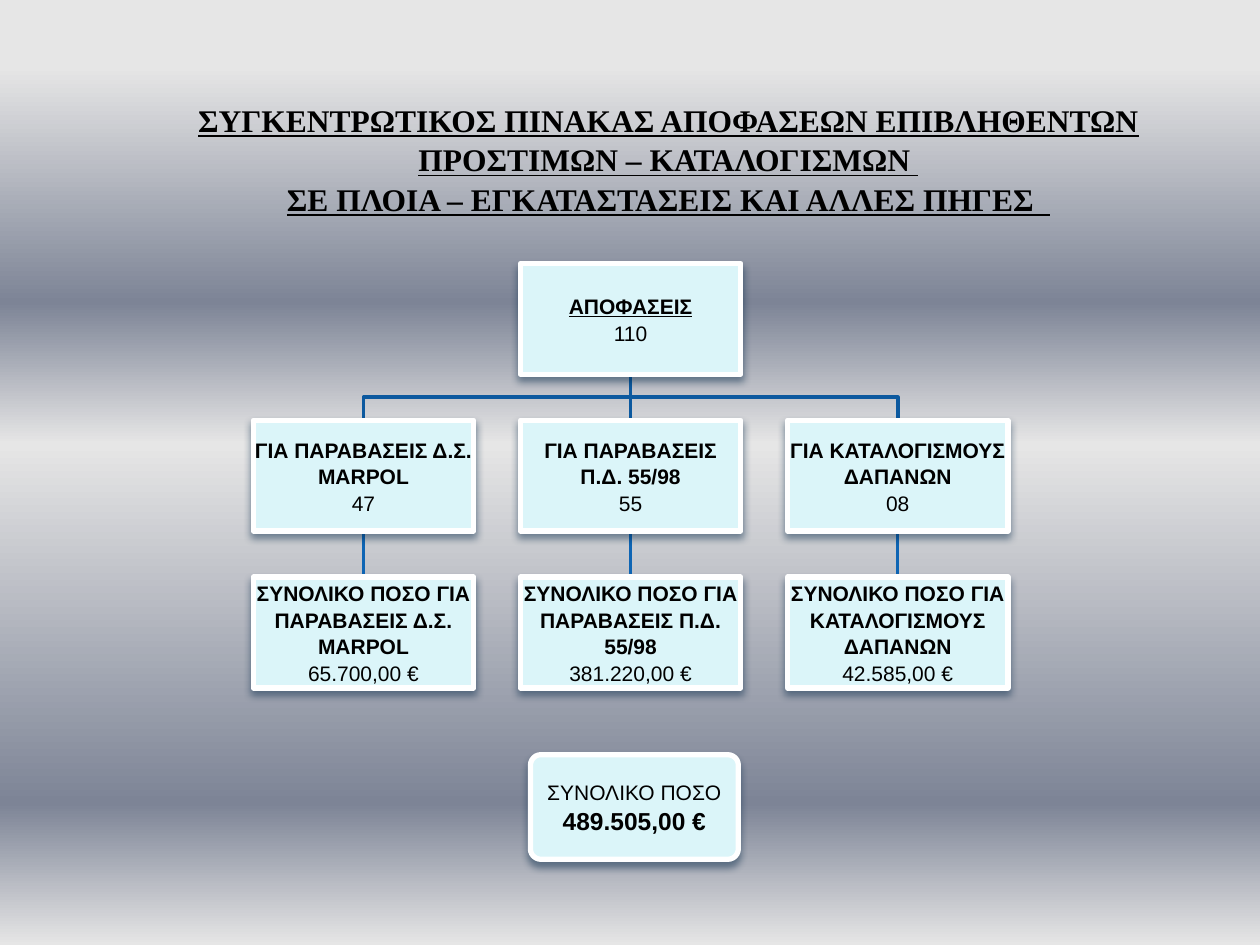
"""Build the summary slide of decisions and fines as an organisation chart."""
from dataclasses import dataclass

from lxml.etree import SubElement
from pptx import Presentation
from pptx.dml.color import RGBColor
from pptx.enum.shapes import MSO_CONNECTOR as Connector, MSO_SHAPE as Preset
from pptx.enum.text import MSO_ANCHOR as Anchor, MSO_AUTO_SIZE as AutoSize, PP_ALIGN as Align
from pptx.oxml.ns import qn
from pptx.shapes.autoshape import Shape
from pptx.slide import Slide
from pptx.text.text import TextFrame
from pptx.util import Inches, Pt


@dataclass(frozen=True)
class Theme:
    box_fill: str = "DBF5F9"
    box_line: str = "FFFFFF"
    shadow: str = "042747"
    text: str = "000000"
    upper_link: str = "0C599F"
    lower_link: str = "0E65B4"
    title_font: str = "Times New Roman"
    body_font: str = "Arial"
    title_size: int = 18
    body_size: int = 12
    total_size: int = 14
    line_spacing: float = 1.05
    background: tuple = ((7, "E6E6E6"), (32, "7D8496"), (47, "E6E6E6"),
                         (85, "7D8496"), (100, "E6E6E6"))


@dataclass(frozen=True)
class Grid:
    left: float = 2.01
    top: float = 2.09
    column_pitch: float = 2.12
    row_pitch: float = 2.49 / 2
    box_width: float = 1.75
    box_height: float = 0.88

    def box(self, column: int, row: int) -> tuple:
        return (self.left + column * self.column_pitch, self.top + row * self.row_pitch,
                self.box_width, self.box_height)


@dataclass(frozen=True)
class Branch:
    reason: str
    count: str
    total_label: str
    amount: str


THEME = Theme()
GRID = Grid()
TITLE = ("ΣΥΓΚΕΝΤΡΩΤΙΚΟΣ ΠΙΝΑΚΑΣ ΑΠΟΦΑΣΕΩΝ ΕΠΙΒΛΗΘΕΝΤΩΝ ΠΡΟΣΤΙΜΩΝ – ΚΑΤΑΛΟΓΙΣΜΩΝ \v"
         "ΣΕ ΠΛΟΙΑ – ΕΓΚΑΤΑΣΤΑΣΕΙΣ ΚΑΙ ΑΛΛΕΣ ΠΗΓΕΣ  ")
BRANCHES = (
    Branch("ΓΙΑ ΠΑΡΑΒΑΣΕΙΣ Δ.Σ. MARPOL", "47",
           "ΣΥΝΟΛΙΚΟ ΠΟΣΟ ΓΙΑ ΠΑΡΑΒΑΣΕΙΣ Δ.Σ. MARPOL", "65.700,00 €"),
    Branch("ΓΙΑ ΠΑΡΑΒΑΣΕΙΣ Π.Δ. 55/98", "55",
           "ΣΥΝΟΛΙΚΟ ΠΟΣΟ ΓΙΑ ΠΑΡΑΒΑΣΕΙΣ Π.Δ. 55/98", "381.220,00 €"),
    Branch("ΓΙΑ ΚΑΤΑΛΟΓΙΣΜΟΥΣ ΔΑΠΑΝΩΝ", "08",
           "ΣΥΝΟΛΙΚΟ ΠΟΣΟ ΓΙΑ ΚΑΤΑΛΟΓΙΣΜΟΥΣ ΔΑΠΑΝΩΝ", "42.585,00 €"),
)


def write(frame: TextFrame, text: str, *, first: bool = False, bold: bool = False,
          underline: bool = False, size: int = THEME.body_size,
          font: str = THEME.body_font) -> None:
    paragraph = frame.paragraphs[0] if first else frame.add_paragraph()
    paragraph.text = text
    paragraph.alignment = Align.CENTER
    paragraph.line_spacing = THEME.line_spacing
    paragraph.space_before = paragraph.space_after = Pt(0)
    for run in paragraph.runs:
        run.font.name = font
        run.font.size = Pt(size)
        run.font.bold = bold
        run.font.underline = underline
        run.font.color.rgb = RGBColor.from_string(THEME.text)


def prepare(frame: TextFrame, anchor: Anchor, margins: tuple) -> None:
    frame.word_wrap = True
    frame.auto_size = AutoSize.NONE
    frame.vertical_anchor = anchor
    (frame.margin_left, frame.margin_top,
     frame.margin_right, frame.margin_bottom) = map(Inches, margins)


def add_color(parent, color: str):
    return SubElement(parent, qn("a:srgbClr"), val=color)


def paint_background(slide: Slide) -> None:
    fill = slide.background.fill
    fill.gradient()
    fill.gradient_angle = 270
    stops = slide.element.find(".//" + qn("a:gsLst"))
    for stop in list(stops):
        stops.remove(stop)
    for position, color in THEME.background:
        add_color(SubElement(stops, qn("a:gs"), pos=str(position * 1000)), color)


def add_title(slide: Slide) -> None:
    title = slide.shapes.title
    title.left, title.top, title.width, title.height = map(Inches, (1.14, 0.78, 8.33, 0.95))
    prepare(title.text_frame, Anchor.BOTTOM, (0, 0.05, 0, 0))
    write(title.text_frame, TITLE, first=True, bold=True, underline=True,
          size=THEME.title_size, font=THEME.title_font)


def add_box(slide: Slide, place: tuple, preset: Preset = Preset.RECTANGLE) -> Shape:
    shape = slide.shapes.add_shape(preset, *map(Inches, place))
    shape.fill.solid()
    shape.fill.fore_color.rgb = RGBColor.from_string(THEME.box_fill)
    shape.line.color.rgb = RGBColor.from_string(THEME.box_line)
    shape.line.width = Pt(3)
    shape.shadow.inherit = False
    effects = shape.element.spPr.find(qn("a:effectLst"))
    shadow = SubElement(effects, qn("a:outerShdw"), blurRad=str(Pt(4.5)), dist=str(Pt(3)),
                        dir="5400000", rotWithShape="0")
    SubElement(add_color(shadow, THEME.shadow), qn("a:alpha"), val="48000")
    prepare(shape.text_frame, Anchor.MIDDLE, (0.01,) * 4)
    return shape


def add_node(slide: Slide, column: int, row: int, label: str, value: str,
             underline: bool = False) -> Shape:
    shape = add_box(slide, GRID.box(column, row))
    write(shape.text_frame, label, first=True, bold=True, underline=underline)
    write(shape.text_frame, value)
    return shape


def finish_link(slide: Slide, link, color: str) -> None:
    link.line.color.rgb = RGBColor.from_string(color)
    link.line.width = Pt(2)
    slide.shapes.element.insert(2, link.element)


def add_straight_link(slide: Slide, parent: Shape, child: Shape, color: str) -> None:
    link = slide.shapes.add_connector(Connector.STRAIGHT, 0, 0, 0, 0)
    link.begin_connect(parent, 2)
    link.end_connect(child, 0)
    finish_link(slide, link, color)
    SubElement(link.element.spPr, qn("a:effectLst"))


def add_elbow_link(slide: Slide, parent: Shape, child: Shape, color: str) -> None:
    start_x = parent.left + parent.width // 2
    end_x = child.left + child.width // 2
    start_y = parent.top + parent.height
    middle_y = (start_y + child.top) // 2
    builder = slide.shapes.build_freeform(start_x, start_y)
    builder.add_line_segments(((start_x, middle_y), (end_x, middle_y), (end_x, child.top)),
                              close=False)
    link = builder.convert_to_shape()
    link.fill.background()
    link.shadow.inherit = False
    finish_link(slide, link, color)


def add_chart_of_decisions(slide: Slide) -> None:
    root = add_node(slide, 1, 0, "ΑΠΟΦΑΣΕΙΣ", "110", underline=True)
    for column, branch in enumerate(BRANCHES):
        reason = add_node(slide, column, 1, branch.reason, branch.count)
        amount = add_node(slide, column, 2, branch.total_label, branch.amount)
        add_root_link = add_straight_link if column == 1 else add_elbow_link
        add_root_link(slide, root, reason, THEME.upper_link)
        add_straight_link(slide, reason, amount, THEME.lower_link)


def add_grand_total(slide: Slide) -> None:
    shape = add_box(slide, (4.21, 5.99, 1.65, 0.83), Preset.ROUNDED_RECTANGLE)
    shape.adjustments[0] = 0.1
    write(shape.text_frame, "ΣΥΝΟΛΙΚΟ ΠΟΣΟ", first=True)
    write(shape.text_frame, "489.505,00 €", bold=True, size=THEME.total_size)


def main() -> None:
    presentation = Presentation()
    presentation.slide_width, presentation.slide_height = Inches(10), Inches(7.5)
    slide = presentation.slides.add_slide(presentation.slide_layouts[5])
    paint_background(slide)
    add_title(slide)
    add_chart_of_decisions(slide)
    add_grand_total(slide)
    presentation.save("out.pptx")


if __name__ == "__main__":
    main()
